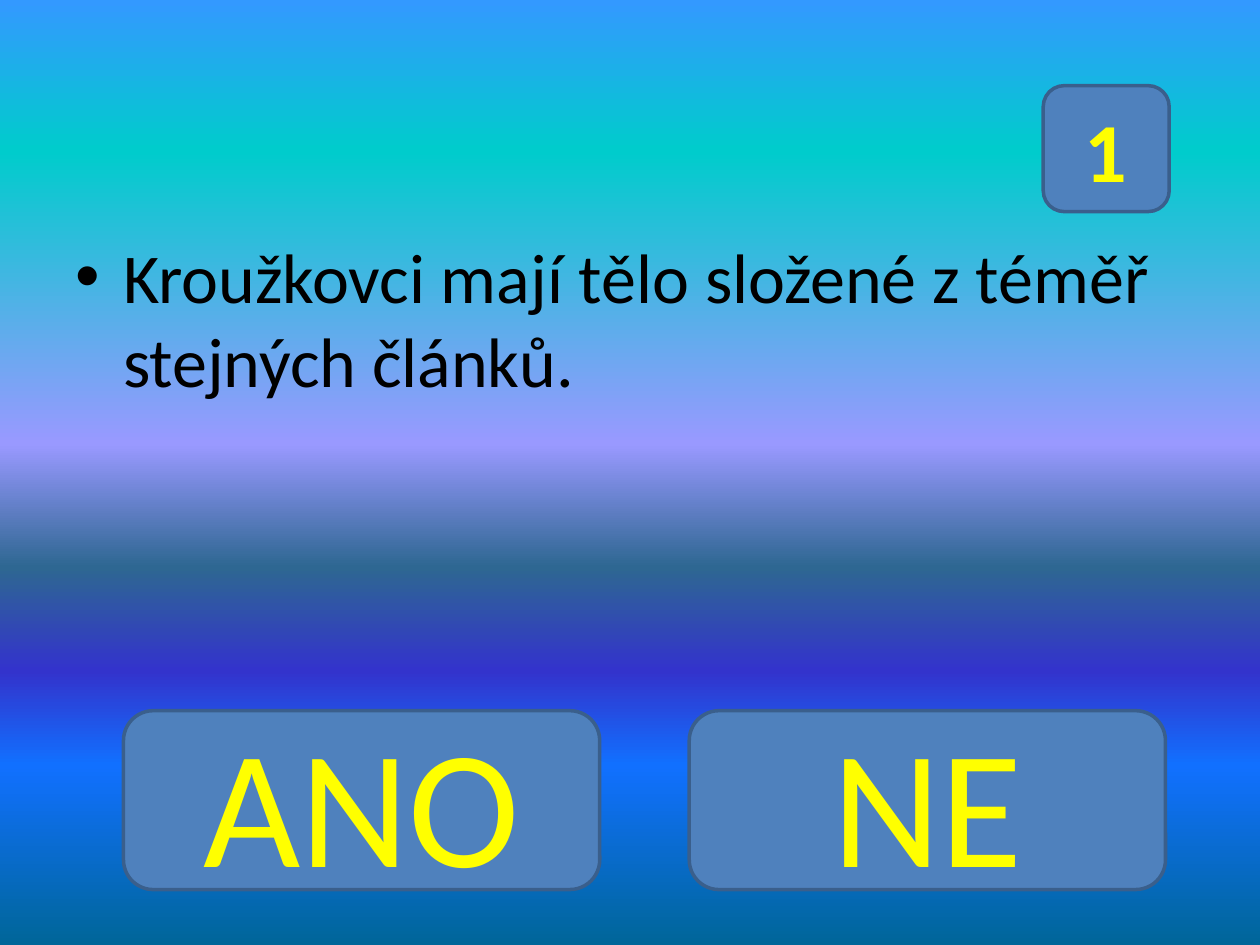
from dataclasses import dataclass

from lxml import etree
from pptx import Presentation
from pptx.dml.color import RGBColor
from pptx.enum import shapes, text
from pptx.oxml.ns import qn
from pptx.util import Inches, Pt

STATEMENT = "Kroužkovci mají tělo složené z téměř stejných článků."
QUESTION_NUMBER = "1"
ANSWERS = ["ANO", "NE"]


@dataclass(frozen=True)
class Theme:
    font: str = "Calibri"
    ink: str = "000000"
    button_fill: str = "4F81BD"
    button_line: str = "3A5F8C"
    button_text: str = "FFFF00"
    statement_size: int = 40
    number_size: int = 48
    answer_size: int = 96
    sky: tuple = (
        (0, "3399FF"), (16, "00CCCC"), (47, "9999FF"), (60, "2E6792"),
        (71, "3333CC"), (81, "1170FF"), (100, "006699"),
    )


THEME = Theme()


def paint_background(page):
    fill = page.background.fill
    fill.gradient()
    fill.gradient_angle = 270  # counter-clockwise, so top to bottom
    stops = page.background._cSld.find(".//" + qn("a:gsLst"))
    for stop in list(stops):
        stops.remove(stop)
    for percent, color in THEME.sky:
        stop = etree.SubElement(stops, qn("a:gs"), pos=str(percent * 1000))
        etree.SubElement(stop, qn("a:srgbClr"), val=color)


def style(para, size, color, bold=False):
    font = para.font
    font.name, font.size, font.bold = THEME.font, Pt(size), bold
    font.color.rgb = RGBColor.from_string(color)


def add_statement(page):
    box = page.shapes.add_textbox(Inches(0.5), Inches(0.52), Inches(9), Inches(4.72))
    frame = box.text_frame
    frame.word_wrap = True
    frame.margin_top = Inches(1.33)
    para = frame.paragraphs[0]
    para.text = STATEMENT
    style(para, THEME.statement_size, THEME.ink)
    indent = Inches(0.38)
    properties = para._p.get_or_add_pPr()
    properties.set("marL", str(indent))
    properties.set("indent", str(-indent))
    bullet_font = etree.Element(qn("a:buFont"), typeface="Arial")
    bullet = etree.Element(qn("a:buChar"), char="•")
    properties.insert(0, bullet_font)
    properties.insert(1, bullet)


def add_button(page, label, left, top, width, height, size, bold=False):
    button = page.shapes.add_shape(
        shapes.MSO_SHAPE.ROUNDED_RECTANGLE,
        Inches(left), Inches(top), Inches(width), Inches(height),
    )
    button.shadow.inherit = False
    button.fill.solid()
    button.fill.fore_color.rgb = RGBColor.from_string(THEME.button_fill)
    button.line.color.rgb = RGBColor.from_string(THEME.button_line)
    button.line.width = Pt(2)
    frame = button.text_frame
    frame.vertical_anchor = text.MSO_ANCHOR.MIDDLE
    para = frame.paragraphs[0]
    para.text = label
    para.alignment = text.PP_ALIGN.CENTER
    style(para, size, THEME.button_text, bold)


def main():
    deck = Presentation()
    deck.slide_width, deck.slide_height = Inches(10), Inches(7.5)
    page = deck.slides.add_slide(deck.slide_layouts[6])
    paint_background(page)
    add_statement(page)
    first_left, pitch = 0.98, 4.49
    for column, answer in enumerate(ANSWERS):
        add_button(page, answer, first_left + column * pitch, 5.64, 3.78, 1.42,
                   THEME.answer_size)
    add_button(page, QUESTION_NUMBER, 8.28, 0.68, 1, 1, THEME.number_size, bold=True)
    deck.save("out.pptx")


if __name__ == "__main__":
    main()
